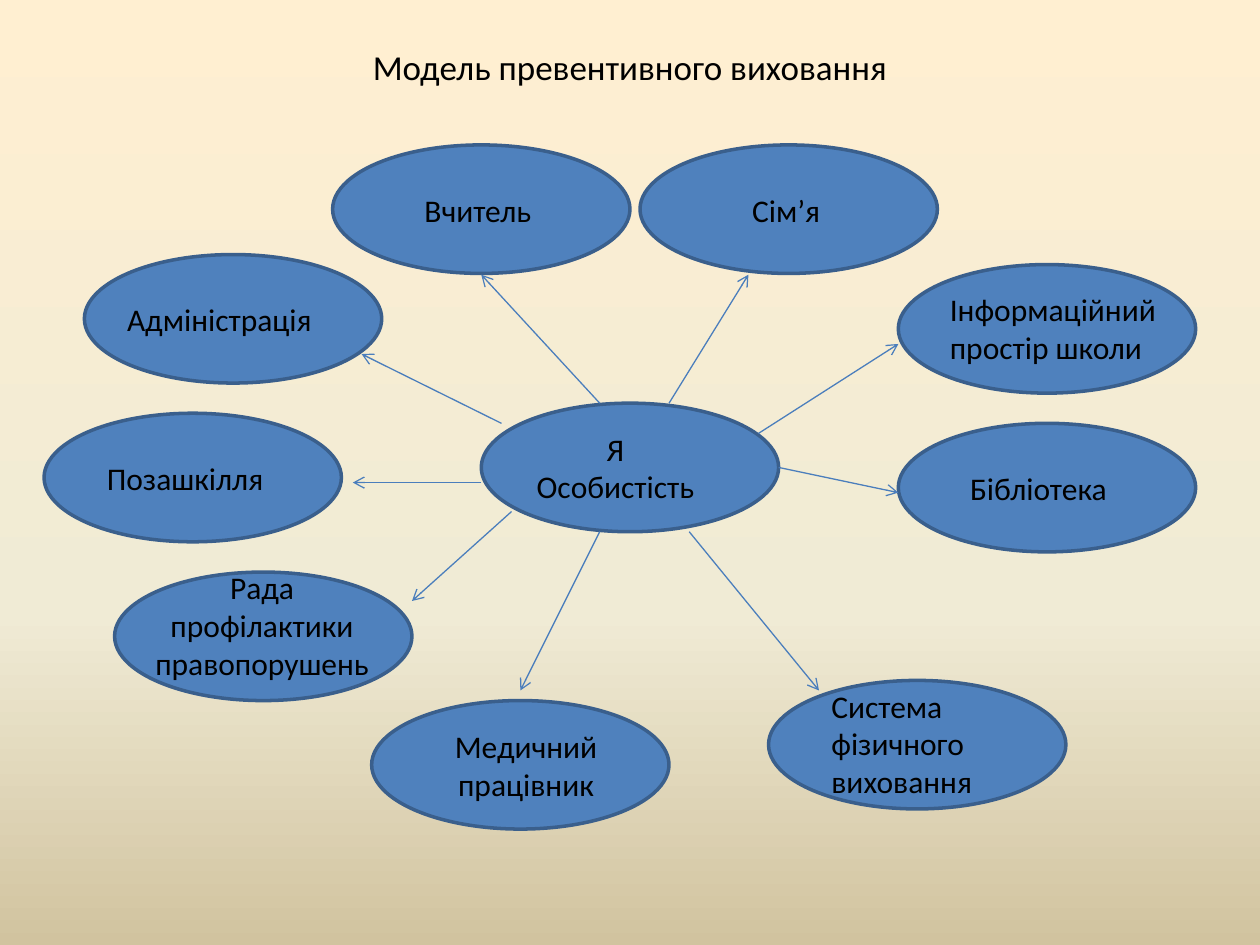
"""Build a slide with a hub-and-spokes model of preventive education."""
from copy import deepcopy

from pptx import Presentation
from pptx import util as u
from pptx.dml.color import RGBColor
from pptx.enum import shapes, text
from pptx.oxml import ns, xmlchemy

FONT = "Calibri"
OVAL_SIZE = (2.36, 1.02)
LEFT, CENTER = text.PP_ALIGN.LEFT, text.PP_ALIGN.CENTER
BACKGROUND = [(0, "FFEFD1"), (0.65, "F0EBD5"), (1, "D1C39F")]
TITLE = ("Модель превентивного виховання", (0.5, 0.3, 9, 0.46))

# oval corner, label, label box, alignment
NODES = [
    ((5.08, 1.15), "Сім’я", (5.87, 1.47, 0.79, 0.4), LEFT),
    ((2.64, 1.15), "Вчитель", (3.27, 1.47, 1.18, 0.4), LEFT),
    ((3.82, 3.2), "Я\nОсобистість", (3.9, 3.36, 1.97, 0.71), CENTER),
    ((0.35, 3.28), "Позашкілля", (0.75, 3.59, 1.57, 0.4), LEFT),
    ((0.91, 4.54), "Рада профілактики правопорушень", (0.98, 4.46, 2.2, 1.01), CENTER),
    ((2.95, 5.56), "Медичний працівник", (3.27, 5.72, 1.81, 0.71), CENTER),
    ((6.1, 5.4), "Система фізичного виховання", (6.5, 5.4, 1.81, 1.01), LEFT),
    ((7.13, 3.36), "Бібліотека", (7.6, 3.67, 1.42, 0.4), LEFT),
    ((7.13, 2.1), "Інформаційний простір школи", (7.44, 2.25, 1.89, 0.71), LEFT),
    ((0.67, 2.02), "Адміністрація", (0.91, 2.33, 1.81, 0.4), LEFT),
]
ARROWS = [
    (3.98, 3.36, 2.87, 2.81),
    (4.76, 3.2, 3.82, 2.18),
    (3.82, 3.83, 2.8, 3.83),
    (4.06, 4.06, 3.27, 4.77),
    (5.31, 3.2, 5.94, 2.18),
    (6.02, 3.44, 7.13, 2.73),
    (6.18, 3.71, 7.13, 3.91),
    (5.47, 4.22, 6.5, 5.48),
    (4.76, 4.22, 4.13, 5.48),
]


def rgb(value):
    return RGBColor.from_string(value)


def inches(values):
    return [u.Inches(v) for v in values]


def set_background(s):
    fill = s.background.fill
    fill.gradient()
    fill.gradient_angle = 270
    stops = s.element.find(".//" + ns.qn("a:gsLst"))
    stops.append(deepcopy(stops[-1]))
    for stop, (position, color) in zip(fill.gradient_stops, BACKGROUND):
        stop.position = position
        stop.color.rgb = rgb(color)


def add_oval(s, corner):
    sp = s.shapes.add_shape(shapes.MSO_SHAPE.OVAL, *inches(corner + OVAL_SIZE))
    sp.shadow.inherit = False
    sp.fill.solid()
    sp.fill.fore_color.rgb = rgb("4F81BD")
    sp.line.color.rgb = rgb("3A5F8C")
    sp.line.width = u.Pt(2)


def add_text(s, words, box, align, size=18, anchor=text.MSO_ANCHOR.TOP):
    tf = s.shapes.add_textbox(*inches(box)).text_frame
    tf.word_wrap = True
    tf.vertical_anchor = anchor
    tf.text = words
    for p in tf.paragraphs:
        p.alignment = align
        p.font.name = FONT
        p.font.size = u.Pt(size)
        p.font.color.rgb = rgb("000000")


def add_arrow(s, ends):
    line = s.shapes.add_connector(shapes.MSO_CONNECTOR.STRAIGHT, *inches(ends))
    line.line.color.rgb = rgb("4B7EBC")
    line.line.width = u.Pt(0.75)
    tail = xmlchemy.OxmlElement("a:tailEnd")
    tail.set("type", "arrow")
    line.line._get_or_add_ln().append(tail)
    line._element.spPr.append(xmlchemy.OxmlElement("a:effectLst"))


def main():
    prs = Presentation()
    prs.slide_width, prs.slide_height = inches((10, 7.5))
    s = prs.slides.add_slide(prs.slide_layouts[6])
    set_background(s)
    for corner, *_ in NODES:
        add_oval(s, corner)
    add_text(s, *TITLE, CENTER, 20, text.MSO_ANCHOR.MIDDLE)
    for _, label, box, align in NODES:
        add_text(s, label, box, align)
    for ends in ARROWS:
        add_arrow(s, ends)
    prs.save("out.pptx")


if __name__ == "__main__":
    main()
